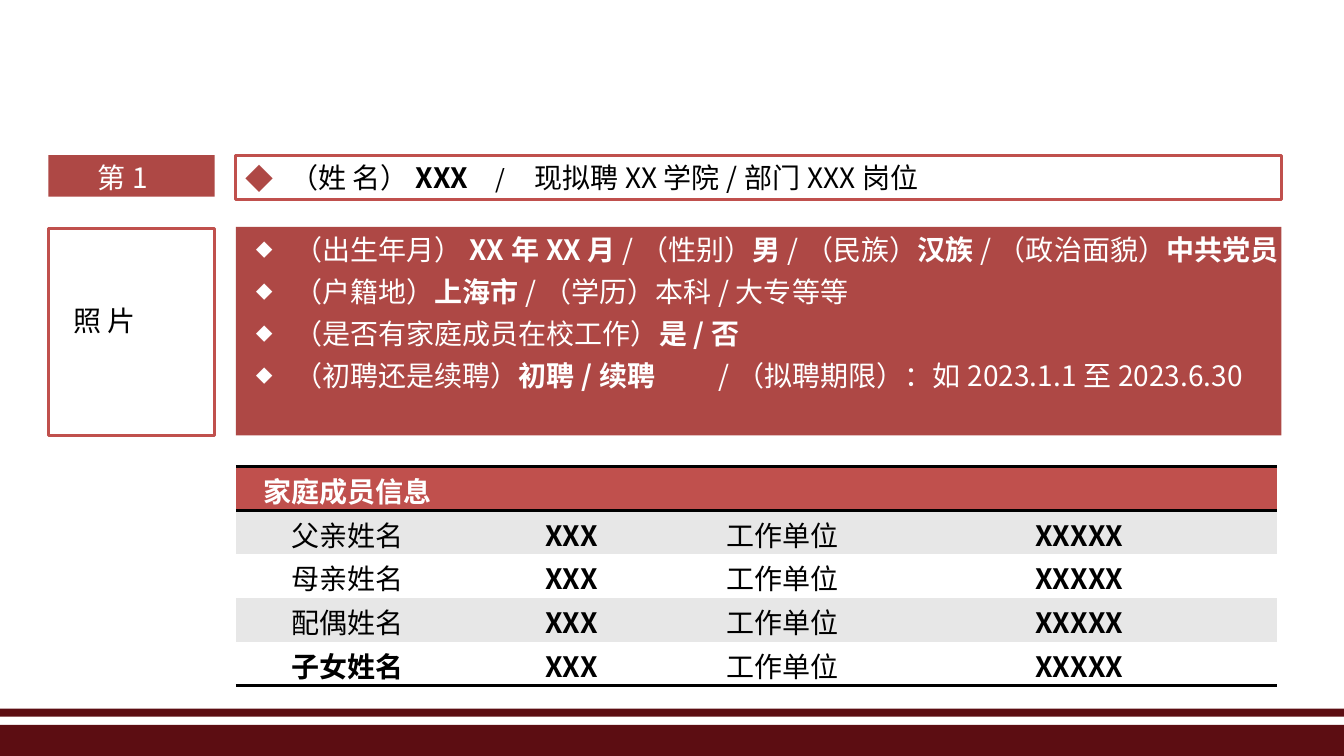
import pptx
import pptx.util
import pptx.dml.color
import pptx.enum.shapes
import pptx.enum.text
import pptx.oxml.ns
from dataclasses import dataclass
from lxml import etree
from pptx.util import Inches

ALIGN = pptx.enum.text.PP_ALIGN
MIDDLE = pptx.enum.text.MSO_ANCHOR.MIDDLE
qn = pptx.oxml.ns.qn


@dataclass(frozen=True)
class Theme:
    font: str = "Noto Sans CJK SC"
    size: int = 20
    slash_size: int = 18
    rule: int = 2
    maroon: str = "5C0D12"
    brick: str = "AE4845"
    red: str = "C0504D"
    band: str = "E7E7E7"
    white: str = "FFFFFF"
    black: str = "000000"


@dataclass(frozen=True)
class Area:
    left: float
    top: float
    width: float
    height: float

    def lengths(self) -> tuple:
        return tuple(Inches(n) for n in (self.left, self.top, self.width, self.height))


@dataclass(frozen=True)
class Panel:
    area: Area
    fill: str
    line: str = ""


@dataclass(frozen=True)
class Piece:
    text: str
    bold: bool = False
    size: int = 20


@dataclass(frozen=True)
class Bullet:
    color: str
    percent: int
    indent: float
    tabs: tuple = ()


THEME = Theme()
FOOTER_BARS = [
    Panel(Area(0, 7.19, 13.33, 0.31), THEME.maroon),
    Panel(Area(0, 7.03, 13.33, 0.08), THEME.maroon),
]
DETAIL_PANEL = Panel(Area(2.34, 2.25, 10.37, 2.07), THEME.brick)
PHOTO_PANEL = Panel(Area(0.48, 2.27, 1.65, 2.05), THEME.white, THEME.red)
NAME_PANEL = Panel(Area(2.34, 1.54, 10.37, 0.44), THEME.white, THEME.red)
RANK_PANEL = Panel(Area(0.48, 1.54, 1.65, 0.41), THEME.brick)
DETAIL_TEXT = Area(2.44, 2.32, 10.53, 1.9)
RANK_TEXT = Area(0.87, 1.54, 1.01, 0.44)
FAMILY_TABLE = Area(2.34, 4.63, 10.34, 2.17)

NAME_LINE = [Piece("（姓 名）"), Piece("XXX", True), Piece("\t/\t", size=THEME.slash_size),
             Piece("现拟聘XX学院/部门XXX岗位")]
DETAIL_LINES = [
    [Piece("（出生年月）"), Piece("XX年XX月", True), Piece("/（性别）"), Piece("男", True),
     Piece("/（民族）"), Piece("汉族", True), Piece("/（政治面貌）"), Piece("中共党员", True)],
    [Piece("（户籍地）"), Piece("上海市", True), Piece("/（学历）本科/大专等等")],
    [Piece("（是否有家庭成员在校工作）"), Piece("是/否", True)],
    [Piece("（初聘还是续聘）"), Piece("初聘/续聘", True),
     Piece("\t/（拟聘期限）：如2023.1.1至2023.6.30")],
]
NAME_BULLET = Bullet(THEME.brick, 100, 0.44, (2.48, 2.86))
DETAIL_BULLET = Bullet(THEME.white, 60, 0.38, (4.59,))

FAMILY_COLUMNS = [2.22, 2.22, 1.96, 3.93]
FAMILY_HEADING = "家庭成员信息"
RELATIVES = ["父亲姓名", "母亲姓名", "配偶姓名", "子女姓名"]


def rgb(color: str) -> pptx.dml.color.RGBColor:
    return pptx.dml.color.RGBColor.from_string(color)


def add_panel(page, panel: Panel):
    box = page.shapes.add_shape(pptx.enum.shapes.MSO_SHAPE.RECTANGLE, *panel.area.lengths())
    box.shadow.inherit = False
    box.fill.solid()
    box.fill.fore_color.rgb = rgb(panel.fill)
    if panel.line:
        box.line.color.rgb = rgb(panel.line)
        box.line.width = pptx.util.Pt(THEME.rule)
    else:
        box.line.fill.background()
    box.text_frame.word_wrap = True
    box.text_frame.vertical_anchor = MIDDLE
    return box


def add_text_box(page, area: Area):
    frame = page.shapes.add_textbox(*area.lengths()).text_frame
    frame.word_wrap = True
    return frame


def write(para, pieces: list[Piece], color: str, align=ALIGN.LEFT) -> None:
    para.alignment = align
    for piece in pieces:
        span = para.add_run()
        span.text = piece.text
        span.font.name = THEME.font
        span.font.size = pptx.util.Pt(piece.size)
        span.font.bold = piece.bold
        span.font.color.rgb = rgb(color)
        etree.SubElement(span.font._element, qn("a:ea"), typeface=THEME.font)


def add_bullet(para, bullet: Bullet) -> None:
    """Give the paragraph a hanging diamond and its tab stops."""
    props = para._p.get_or_add_pPr()
    props.set("marL", str(Inches(bullet.indent)))
    props.set("indent", str(-Inches(bullet.indent)))
    color = etree.SubElement(props, qn("a:buClr"))
    etree.SubElement(color, qn("a:srgbClr"), val=bullet.color)
    etree.SubElement(props, qn("a:buSzPct"), val=str(bullet.percent * 1000))
    etree.SubElement(props, qn("a:buFont"), typeface=THEME.font)
    etree.SubElement(props, qn("a:buChar"), char="◆")
    stops = etree.SubElement(props, qn("a:tabLst"))
    for position in bullet.tabs:
        etree.SubElement(stops, qn("a:tab"), pos=str(Inches(position)), algn="l")


def add_details(page) -> None:
    frame = add_text_box(page, DETAIL_TEXT)
    for number, pieces in enumerate(DETAIL_LINES):
        para = frame.add_paragraph() if number else frame.paragraphs[0]
        add_bullet(para, DETAIL_BULLET)
        para.line_spacing = 0.8
        para.space_after = pptx.util.Pt(10.9)
        write(para, pieces, THEME.white)


def set_cell(cell, piece: Piece, fill: str, color: str, edges: tuple) -> None:
    cell.margin_top, cell.margin_bottom = Inches(0.03), 0
    cell.vertical_anchor = MIDDLE
    props = cell._tc.get_or_add_tcPr()
    for edge in edges:
        line = etree.SubElement(props, qn(f"a:{edge}"), w=str(pptx.util.Pt(THEME.rule)))
        paint = etree.SubElement(line, qn("a:solidFill"))
        etree.SubElement(paint, qn("a:srgbClr"), val=THEME.black)
    cell.fill.solid()
    cell.fill.fore_color.rgb = rgb(fill)
    if piece.text:
        write(cell.text_frame.paragraphs[0], [piece], color, ALIGN.CENTER)


def add_family_table(page) -> None:
    rows = [[Piece(FAMILY_HEADING, True)] + [Piece("")] * 3]
    rows += [[Piece(name, name == RELATIVES[-1]), Piece("XXX", True),
              Piece("工作单位"), Piece("XXXXX", True)] for name in RELATIVES]
    table = page.shapes.add_table(len(rows), len(FAMILY_COLUMNS), *FAMILY_TABLE.lengths()).table
    table.horz_banding = False
    no_style = "{2D5ABB26-0587-4C30-8999-92F81FD0307C}"
    table._tbl.tblPr.find(qn("a:tableStyleId")).text = no_style
    for column, width in zip(table.columns, FAMILY_COLUMNS):
        column.width = Inches(width)
    for r, row in enumerate(rows):
        fill = THEME.band if r % 2 else THEME.white
        color, edges = THEME.black, ()
        if r == 0:
            fill, color, edges = THEME.red, THEME.white, ("lnT", "lnB")
        elif r == len(rows) - 1:
            edges = ("lnB",)
        for c, piece in enumerate(row):
            set_cell(table.cell(r, c), piece, fill, color, edges)


def main() -> None:
    deck = pptx.Presentation()
    deck.slide_width, deck.slide_height = Inches(13.33), Inches(7.5)
    page = deck.slides.add_slide(deck.slide_layouts[6])
    for panel in FOOTER_BARS + [DETAIL_PANEL]:
        add_panel(page, panel)
    photo = add_panel(page, PHOTO_PANEL).text_frame
    photo.margin_right, photo.margin_bottom = Inches(0.63), Inches(0.28)
    write(photo.paragraphs[0], [Piece("照 片")], THEME.black, ALIGN.CENTER)
    add_family_table(page)
    add_details(page)
    name = add_panel(page, NAME_PANEL).text_frame.paragraphs[0]
    add_bullet(name, NAME_BULLET)
    write(name, NAME_LINE, THEME.black)
    add_panel(page, RANK_PANEL)
    write(add_text_box(page, RANK_TEXT).paragraphs[0], [Piece("第1位")], THEME.white)
    deck.save("out.pptx")


if __name__ == "__main__":
    main()
